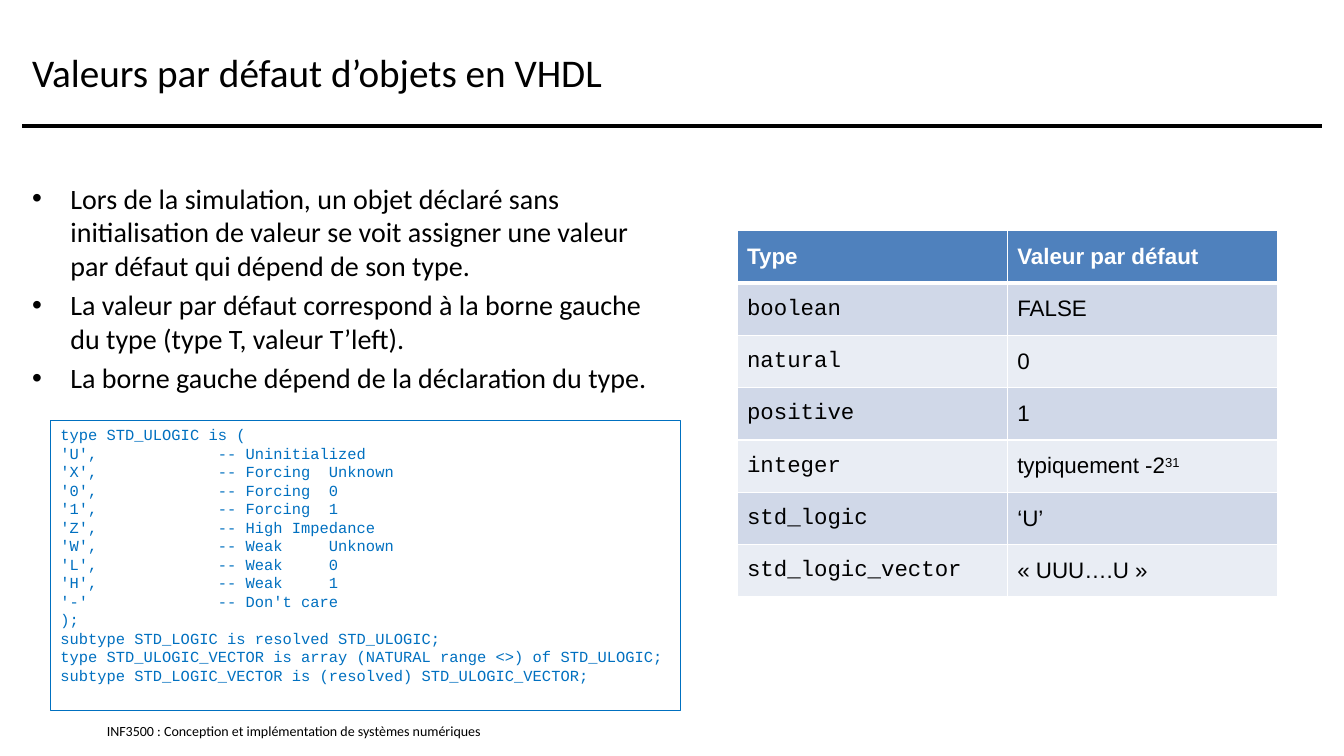
from typing import NamedTuple

from lxml import etree
from pptx import Presentation
from pptx.dml.color import RGBColor
from pptx.enum.shapes import MSO_CONNECTOR, MSO_SHAPE
from pptx.enum.text import MSO_ANCHOR, PP_ALIGN
from pptx.oxml.ns import qn
from pptx.util import Inches, Pt

LEFT = PP_ALIGN.LEFT
TOP, MIDDLE = MSO_ANCHOR.TOP, MSO_ANCHOR.MIDDLE
RECT, STRAIGHT = MSO_SHAPE.RECTANGLE, MSO_CONNECTOR.STRAIGHT
BLACK, WHITE, BLUE = "000000", "FFFFFF", "0070C0"
HEAD, BANDS = "4F81BD", ("E9EDF4", "D0D8E8")


class Style(NamedTuple):
    name: str
    size: float
    color: str = BLACK
    bold: bool = False


class Block(NamedTuple):
    at: tuple[float, float, float, float]
    lines: list[str]
    style: Style
    anchor: str = TOP
    pad: bool = True
    bullet: bool = False
    edge: str = ""


class Entry(NamedTuple):
    """A table row; a caret in the value starts a superscript."""
    kind: str
    value: str


CODE = """type STD_ULOGIC is (
'U',             -- Uninitialized
'X',             -- Forcing  Unknown
'0',             -- Forcing  0
'1',             -- Forcing  1
'Z',             -- High Impedance
'W',             -- Weak     Unknown
'L',             -- Weak     0
'H',             -- Weak     1
'-'              -- Don't care
);
subtype STD_LOGIC is resolved STD_ULOGIC;
type STD_ULOGIC_VECTOR is array (NATURAL range <>) of STD_ULOGIC;
subtype STD_LOGIC_VECTOR is (resolved) STD_ULOGIC_VECTOR;"""

BLOCKS = [
    Block((1.06, 7.17, 5.11, 0.17),
          ["INF3500 : Conception et implémentation de systèmes numériques"],
          Style("Calibri", 10), MIDDLE, pad=False),
    Block((0.22, 0.17, 12.89, 1.08), ["Valeurs par défaut d’objets en VHDL"],
          Style("Calibri", 28), MIDDLE),
    Block((0.22, 1.75, 6.33, 5.08), [
        "Lors de la simulation, un objet déclaré sans initialisation de valeur "
        "se voit assigner une valeur par défaut qui dépend de son type.",
        "La valeur par défaut correspond à la borne gauche du type "
        "(type T, valeur T’left).",
        "La borne gauche dépend de la déclaration du type.",
    ], Style("Calibri", 20), bullet=True),
    Block((0.5, 4.17, 6.25, 2.88), CODE.splitlines(),
          Style("Courier New", 11, BLUE), edge=BLUE),
]

ENTRIES = [
    Entry("Type", "Valeur par défaut"),
    Entry("boolean", "FALSE"),
    Entry("natural", "0"),
    Entry("positive", "1"),
    Entry("integer", "typiquement -2^31"),
    Entry("std_logic", "‘U’"),
    Entry("std_logic_vector", "« UUU….U »"),
]


def rgb(code: str) -> RGBColor:
    return RGBColor.from_string(code)


def set_font(para, style: Style) -> None:
    font = para.font
    font.name, font.size, font.bold = style.name, Pt(style.size), style.bold
    font.color.rgb = rgb(style.color)


def add_bullet(para) -> None:
    props = para._p.get_or_add_pPr()
    props.set("marL", str(Inches(0.38)))
    props.set("indent", str(Inches(-0.38)))
    etree.SubElement(props, qn("a:buFont"), typeface="Arial")
    etree.SubElement(props, qn("a:buChar"), char="•")


def add_block(slide, block: Block) -> None:
    at = [Inches(n) for n in block.at]
    if block.edge:
        shape = slide.shapes.add_shape(RECT, *at)
        shape.shadow.inherit = False
        shape.fill.background()
        shape.line.color.rgb = rgb(block.edge)
        shape.line.width = Pt(0.75)
    else:
        shape = slide.shapes.add_textbox(*at)
    frame = shape.text_frame
    frame.word_wrap = True
    frame.vertical_anchor = block.anchor
    if not block.pad:
        frame.margin_left = frame.margin_right = 0
        frame.margin_top = frame.margin_bottom = 0
    frame.text = "\n".join(block.lines)
    for i, para in enumerate(frame.paragraphs):
        para.alignment = LEFT
        if block.bullet:
            para.space_before = Pt(4 if i else 0)
            add_bullet(para)
        set_font(para, block.style)


def add_rule(slide) -> None:
    rule = slide.shapes.add_connector(
        STRAIGHT, Inches(0.22), Inches(1.25), Inches(13.11), Inches(1.25))
    rule.line.color.rgb = rgb(BLACK)
    rule.line.width = Pt(3)
    etree.SubElement(rule._element.spPr, qn("a:effectLst"))


def add_edges(cell, base: float) -> None:
    """Draw white cell borders, the bottom one with its own width."""
    props = cell._tc.get_or_add_tcPr()
    for side in "LRTB":
        width = Pt(base if side == "B" else 1)
        line = etree.SubElement(props, qn(f"a:ln{side}"), w=str(width))
        fill = etree.SubElement(line, qn("a:solidFill"))
        etree.SubElement(fill, qn("a:srgbClr"), val=WHITE)


def fill_cell(cell, text: str, style: Style, back: str, base: float) -> None:
    add_edges(cell, base)
    cell.fill.solid()
    cell.fill.fore_color.rgb = rgb(back)
    cell.vertical_anchor = MIDDLE
    para = cell.text_frame.paragraphs[0]
    main, _, power = text.partition("^")
    para.add_run().text = main
    if power:
        run = para.add_run()
        run.text = power
        run._r.get_or_add_rPr().set("baseline", "30000")
    set_font(para, style)


def add_grid(slide, entries: list[Entry]) -> None:
    table = slide.shapes.add_table(
        len(entries), 2, Inches(7.31), Inches(2.29), Inches(5.36), Inches(3.63)).table
    table.horz_banding = False
    head = Style("Arial", 16, WHITE, True)
    styles = Style("Courier New", 16), Style("Arial", 16)
    for row, entry in enumerate(entries):
        back = BANDS[row % 2] if row else HEAD
        for col, text in enumerate(entry):
            fill_cell(table.cell(row, col), text,
                      styles[col] if row else head, back, 1 if row else 3)


def main() -> None:
    deck = Presentation()
    deck.slide_width, deck.slide_height = Inches(13.33), Inches(7.5)
    slide = deck.slides.add_slide(deck.slide_layouts[6])
    add_rule(slide)
    for block in BLOCKS:
        add_block(slide, block)
    add_grid(slide, ENTRIES)
    deck.save("out.pptx")


if __name__ == "__main__":
    main()
